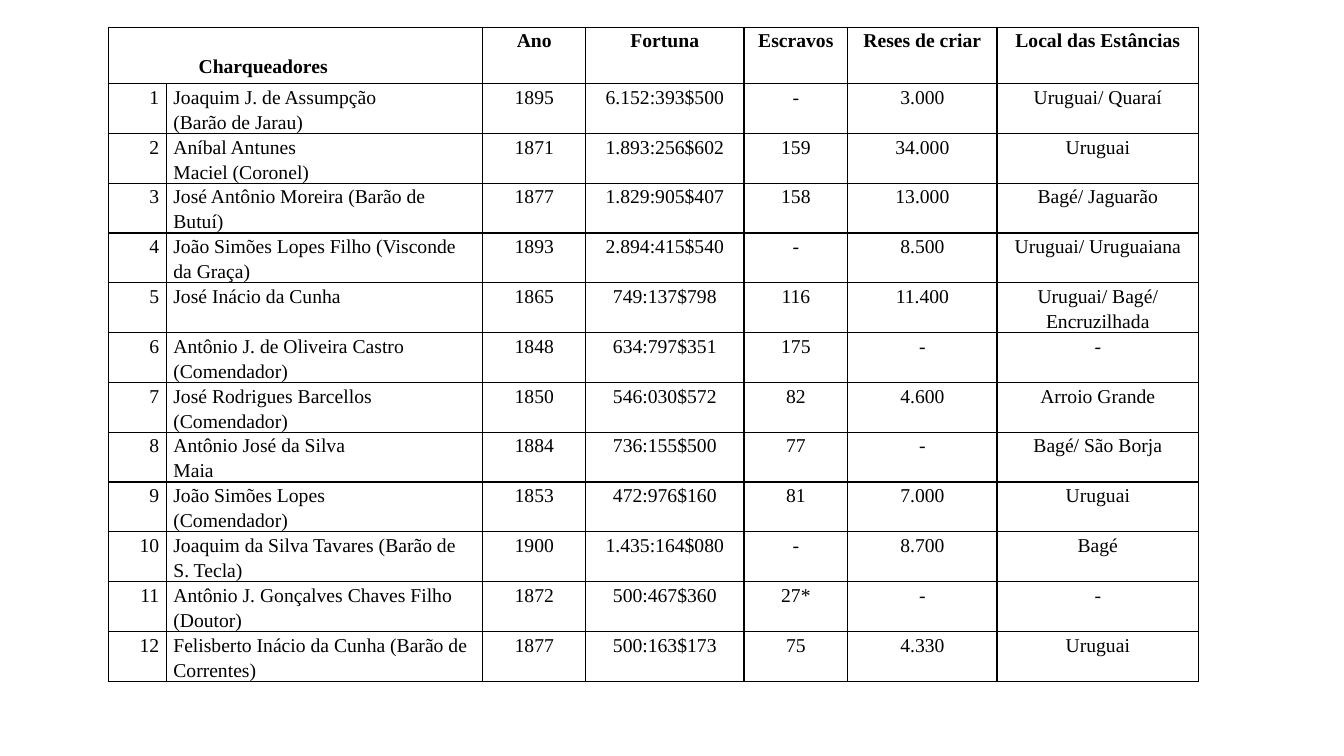
from lxml.etree import SubElement
from pptx import Presentation
from pptx.dml.color import RGBColor
from pptx.enum.text import PP_ALIGN
from pptx.oxml.ns import qn
from pptx.util import Inches, Pt

COLORS = {"ink": "000000"}
FONT = "Times New Roman"
HEADERS = ["Charqueadores", "", "Ano", "Fortuna", "Escravos", "Reses de criar", "Local das Estâncias"]
RANCHERS = [
    ("Joaquim J. de Assumpção\n(Barão de Jarau)", "1895", "6.152:393$500", "-", "3.000", "Uruguai/ Quaraí"),
    ("Aníbal Antunes\nMaciel (Coronel)", "1871", "1.893:256$602", "159", "34.000", "Uruguai"),
    ("José Antônio Moreira (Barão de Butuí)", "1877", "1.829:905$407", "158", "13.000", "Bagé/ Jaguarão"),
    ("João Simões Lopes Filho (Visconde da Graça)", "1893", "2.894:415$540", "-", "8.500", "Uruguai/ Uruguaiana"),
    ("José Inácio da Cunha", "1865", "749:137$798", "116", "11.400", "Uruguai/ Bagé/ Encruzilhada"),
    ("Antônio J. de Oliveira Castro (Comendador)", "1848", "634:797$351", "175", "-", "-"),
    ("José Rodrigues Barcellos\n(Comendador)", "1850", "546:030$572", "82", "4.600", "Arroio Grande"),
    ("Antônio José da Silva\nMaia", "1884", "736:155$500", "77", "-", "Bagé/ São Borja"),
    ("João Simões Lopes\n(Comendador)", "1853", "472:976$160", "81", "7.000", "Uruguai"),
    ("Joaquim da Silva Tavares (Barão de S. Tecla)", "1900", "1.435:164$080", "-", "8.700", "Bagé"),
    ("Antônio J. Gonçalves Chaves Filho (Doutor)", "1872", "500:467$360", "27*", "-", "-"),
    ("Felisberto Inácio da Cunha (Barão de Correntes)", "1877", "500:163$173", "75", "4.330", "Uruguai"),
]
COLUMN_WIDTHS = [0.57, 3.14, 1.02, 1.57, 1.03, 1.48, 2]
ALIGNMENTS = [PP_ALIGN.RIGHT, PP_ALIGN.LEFT] + [PP_ALIGN.CENTER] * 5
HEADER_HEIGHT, ROW_HEIGHT = 0.56, 0.49


def add_borders(cell):
    properties = cell._tc.get_or_add_tcPr()
    for side in ("a:lnL", "a:lnR", "a:lnT", "a:lnB"):
        line = SubElement(properties, qn(side), w=str(Pt(1)))
        fill = SubElement(line, qn("a:solidFill"))
        SubElement(fill, qn("a:srgbClr"), val=COLORS["ink"])


def fill_cell(cell, text, alignment, bold):
    add_borders(cell)
    cell.fill.background()
    cell.margin_left = cell.margin_right = Inches(0.07)
    cell.margin_top = cell.margin_bottom = 0
    cell.text = text
    for paragraph in cell.text_frame.paragraphs:
        paragraph.alignment = alignment
        paragraph.line_spacing = 1.15
        paragraph.font.name = FONT
        paragraph.font.size = Pt(14)
        paragraph.font.bold = bold
        paragraph.font.color.rgb = RGBColor.from_string(COLORS["ink"])


def main():
    presentation = Presentation()
    presentation.slide_width, presentation.slide_height = Inches(13.33), Inches(7.5)
    slide = presentation.slides.add_slide(presentation.slide_layouts[6])

    rows = [HEADERS] + [(str(number), *rancher) for number, rancher in enumerate(RANCHERS, 1)]
    height = HEADER_HEIGHT + ROW_HEIGHT * len(RANCHERS)
    table = slide.shapes.add_table(
        len(rows), len(HEADERS), Inches(1.08), Inches(0.27), Inches(sum(COLUMN_WIDTHS)), Inches(height)
    ).table
    table.first_row = table.horz_banding = False
    for column, width in zip(table.columns, COLUMN_WIDTHS):
        column.width = Inches(width)

    for row_index, row in enumerate(rows):
        is_header = row_index == 0
        table.rows[row_index].height = Inches(HEADER_HEIGHT if is_header else ROW_HEIGHT)
        for column_index, text in enumerate(row):
            fill_cell(table.cell(row_index, column_index), text, ALIGNMENTS[column_index], is_header)

    ranchers_header = table.cell(0, 0)
    ranchers_header.merge(table.cell(0, 1))
    ranchers_header.margin_left = Inches(0.89)
    ranchers_header.margin_top = Inches(0.25)
    ranchers_header.text_frame.paragraphs[0].alignment = PP_ALIGN.LEFT

    presentation.save("out.pptx")


if __name__ == "__main__":
    main()
